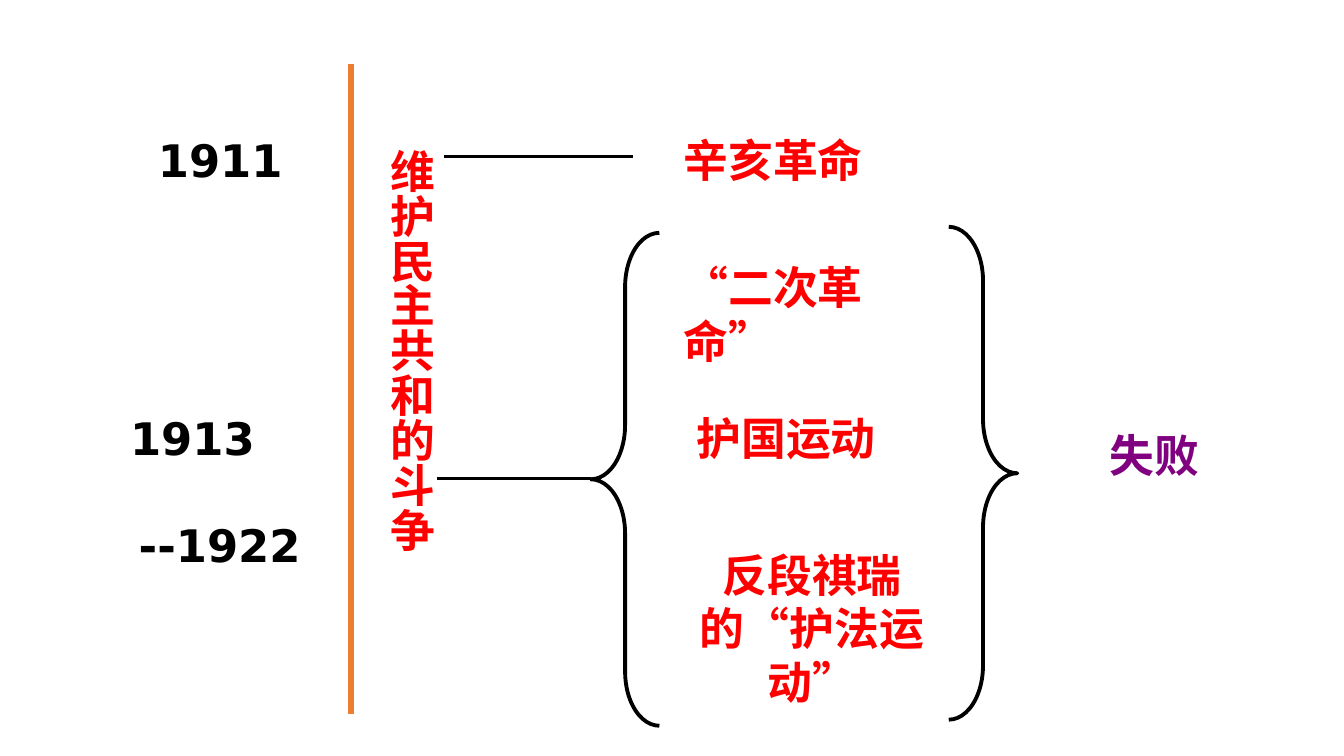
from dataclasses import dataclass

from lxml import etree
from pptx import Presentation
from pptx import util as u
from pptx.dml.color import RGBColor
from pptx.enum import shapes, text
from pptx.oxml.ns import qn


@dataclass(frozen=True)
class Theme:
    """Colours, fonts, type size and line widths of the slide."""
    ink: str = "000000"
    axis: str = "ED7D31"
    event: str = "FF0000"
    result: str = "800080"
    latin: str = "DejaVu Sans"
    cjk: str = "Noto Sans CJK SC"
    size: float = 32
    axis_width: float = 4.5
    stem_width: float = 2.25
    brace_width: float = 2.75


THEME = Theme()
COLS, ROWS = 133.3, 75
CENTER, LEFT = text.PP_ALIGN.CENTER, text.PP_ALIGN.LEFT


def grid(*cells):
    """Turn grid cells of a tenth of an inch into lengths."""
    return [u.Inches(c / 10) for c in cells]


def add_text(s, words, cells, color, align=LEFT, face=THEME.latin, vert=None, wrap=True):
    """Place one bold label on the given cells."""
    sp = s.shapes.add_textbox(*grid(*cells))
    tf = sp.text_frame
    tf.word_wrap = wrap
    if vert:
        tf._txBody.bodyPr.set("vert", vert)
    p = tf.paragraphs[0]
    p.alignment = align
    r = p.add_run()
    r.text = words
    for name, value in {"size": u.Pt(THEME.size), "bold": True, "name": face}.items():
        setattr(r.font, name, value)
    r.font.color.rgb = RGBColor.from_string(color)
    etree.SubElement(r._r.get_or_add_rPr(), qn("a:ea")).set("typeface", THEME.cjk)


def add_line(s, ends, color, width):
    """Draw a straight line between two grid points."""
    line = s.shapes.add_connector(shapes.MSO_CONNECTOR.STRAIGHT, *grid(*ends))
    line.line.color.rgb = RGBColor.from_string(color)
    line.line.width = u.Pt(width)
    etree.SubElement(line._element.spPr, qn("a:effectLst"))


def add_brace(s, kind, cells):
    """Draw an unfilled curly brace."""
    sp = s.shapes.add_shape(kind, *grid(*cells))
    sp.shadow.inherit = False
    sp.fill.background()
    sp.line.color.rgb = RGBColor.from_string(THEME.ink)
    sp.line.width = u.Pt(THEME.brace_width)
    sp.adjustments[0] = 0.79
    sp.adjustments[1] = 0.5


def timeline(s, x, y, w, h):
    """Dates to the left of a vertical axis on the right edge of the box."""
    add_line(s, (x + w, y, x + w, y + h), THEME.axis, THEME.axis_width)
    dates = [("1911", 0, 6.3, 23.9), ("1913", 1.2, 33.9, 16), ("--1922", 1.7, 44.5, 20.4)]
    for date, dx, dy, width in dates:
        add_text(s, date, (x + dx, y + dy, width, 6.4), THEME.ink, CENTER)


def topic(s, x, y, w, h):
    """Vertical topic with two stems leading right."""
    for dx, dy, length in [(w, 1.7, 18.8), (w - 0.7, 33.7, 15.3)]:
        ends = (x + dx, y + dy, x + dx + length, y + dy)
        add_line(s, ends, THEME.ink, THEME.stem_width)
    add_text(s, "维护民主共和的斗争", (x, y, w, h), THEME.event, vert="eaVert")


def events(s, x, y, w, h):
    """Events, the last three enclosed by braces."""
    brace_w, brace_h = 6.8, 48.9
    add_brace(s, shapes.MSO_SHAPE.LEFT_BRACE, (x, y + h - brace_h, brace_w, brace_h))
    add_brace(s, shapes.MSO_SHAPE.RIGHT_BRACE,
              (x + w - brace_w, y + h - brace_h - 0.6, brace_w, brace_h))
    items = [
        ("辛亥革命", 8.2, 0, 21.9, 6.4, LEFT),
        ("“二次革命”", 8.2, 12.6, 27.3, 6.4, LEFT),
        ("护国运动", 9.5, 27.6, 22.2, 6.4, LEFT),
        ("反段祺瑞的“护法运动”", 8.4, 41.1, 27.1, 11.8, CENTER),
    ]
    for words, dx, dy, width, height, align in items:
        add_text(s, words, (x + dx, y + dy, width, height), THEME.event, align)


def result(s, x, y, w, h):
    """Outcome of the bracketed events."""
    add_text(s, "失败", (x, y, w, h), THEME.result, CENTER, THEME.cjk, wrap=False)


def main():
    """Build and save the slide."""
    prs = Presentation()
    prs.slide_width, prs.slide_height = grid(COLS, ROWS)
    s = prs.slides.add_slide(prs.slide_layouts[6])
    timeline(s, 9.9, 6.4, 24.9, 64.4)
    topic(s, 36.6, 13.8, 7.4, 42.6)
    events(s, 58.6, 12.7, 42.3, 59.3)
    result(s, 104.5, 41.9, 20, 10.2)
    prs.save("out.pptx")


if __name__ == "__main__":
    main()
